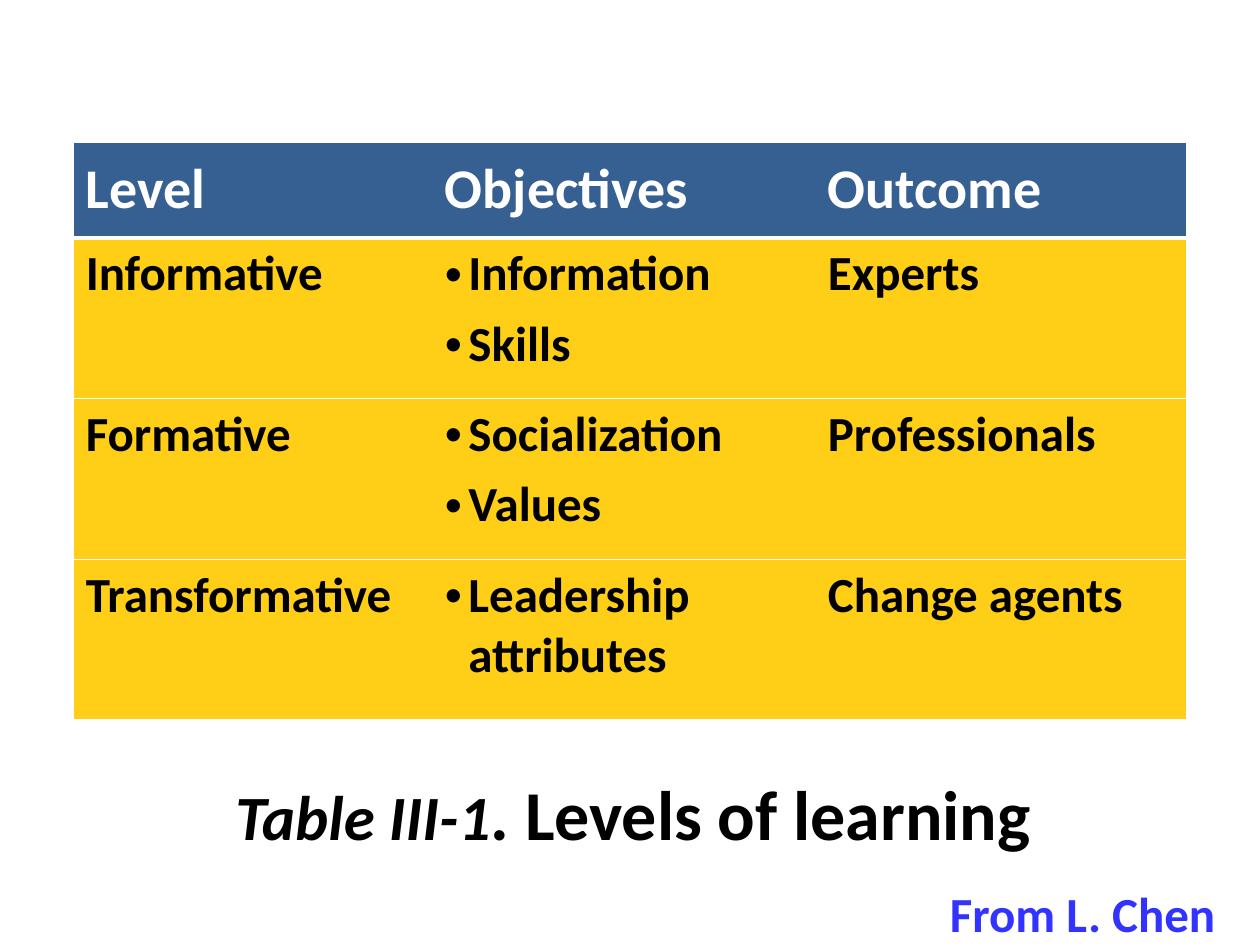
from dataclasses import dataclass

import pptx
import pptx.dml.color
import pptx.enum.text
import pptx.oxml
import pptx.oxml.ns
import pptx.util
from pptx.util import Pt


@dataclass(frozen=True)
class Theme:
    font: str = "Calibri"
    white: str = "FFFFFF"
    black: str = "000000"
    header_fill: str = "376092"
    body_fill: str = "FFCE17"
    credit: str = "3333FF"
    header_size: int = 32
    body_size: int = 28
    label_size: int = 36
    title_size: int = 40
    credit_size: int = 28
    rule: int = 1
    header_rule: int = 3
    bullet_indent: float = 13.5


COLUMN_WIDTHS = [205.2, 218.9, 212.4]
HEADER_HEIGHT, LEVEL_HEIGHT = 55, 91.8
HEADINGS = ["Level", "Objectives", "Outcome"]
LEVELS = [
    ("Informative", ["Information", "Skills"], "Experts"),
    ("Formative", ["Socialization", "Values"], "Professionals"),
    ("Transformative", ["Leadership attributes"], "Change agents"),
]


def rgb(color):
    return pptx.dml.color.RGBColor.from_string(color)


def element(xml):
    """Parse a DrawingML element, adding the namespace to its root tag."""
    tag, rest = xml.split(" ", 1)
    return pptx.oxml.parse_xml(f"{tag} {pptx.oxml.ns.nsdecls('a')} {rest}")


class SlideBuilder:
    def __init__(self, slide, theme):
        self.slide = slide
        self.theme = theme

    def style(self, run, size, color, italic=False):
        font = run.font
        font.name = self.theme.font
        font.size = Pt(size)
        font.bold = True
        font.italic = italic
        font.color.rgb = rgb(color)

    def text(self, left, top, width, height, runs, align, anchor):
        """Add one line of text from (text, size, color, italic) runs."""
        box = self.slide.shapes.add_textbox(Pt(left), Pt(top), Pt(width), Pt(height))
        frame = box.text_frame
        frame.word_wrap = True
        frame.vertical_anchor = anchor
        line = frame.paragraphs[0]
        line.alignment = align
        for wording, size, color, italic in runs:
            run = line.add_run()
            run.text = wording
            self.style(run, size, color, italic)

    def bullet(self, paragraph):
        properties = paragraph._p.get_or_add_pPr()
        indent = Pt(self.theme.bullet_indent)
        properties.set("marL", str(indent))
        properties.set("indent", str(-indent))
        properties.append(element('<a:buFont typeface="Arial"/>'))
        properties.append(element('<a:buChar char="•"/>'))

    def borders(self, cell, widths):
        """Set the left, right, top and bottom borders; None hides one."""
        properties = cell._tc.get_or_add_tcPr()
        for place, (side, width) in enumerate(zip("LRTB", widths)):
            if width is None:
                xml = f'<a:ln{side} w="0"><a:noFill/></a:ln{side}>'
            else:
                xml = (f'<a:ln{side} w="{Pt(width)}"><a:solidFill>'
                       f'<a:srgbClr val="{self.theme.white}"/>'
                       f'</a:solidFill></a:ln{side}>')
            properties.insert(place, element(xml))

    def cell(self, cell, lines, is_header, bulleted):
        theme = self.theme
        cell.fill.solid()
        cell.fill.fore_color.rgb = rgb(theme.header_fill if is_header else theme.body_fill)
        anchors = pptx.enum.text.MSO_ANCHOR
        cell.vertical_anchor = anchors.MIDDLE if is_header else anchors.TOP
        cell.text_frame.text = "\n".join(lines)
        for paragraph in cell.text_frame.paragraphs:
            if is_header:
                self.style(paragraph.runs[0], theme.header_size, theme.white)
            else:
                self.style(paragraph.runs[0], theme.body_size, theme.black)
                paragraph.space_before = Pt(6)
            if bulleted:
                self.bullet(paragraph)

    def table(self, left, top, widths, heights, rows):
        theme = self.theme
        table = self.slide.shapes.add_table(
            len(rows), len(widths), Pt(left), Pt(top),
            Pt(sum(widths)), Pt(sum(heights))).table
        for column, width in zip(table.columns, widths):
            column.width = Pt(width)
        for row, height in zip(table.rows, heights):
            row.height = Pt(height)
        last_column = len(widths) - 1
        for r, row in enumerate(rows):
            for c, content in enumerate(row):
                bulleted = isinstance(content, list)
                lines = content if bulleted else [content]
                cell = table.cell(r, c)
                self.cell(cell, lines, r == 0, bulleted)
                self.borders(cell, [
                    theme.rule if c == 0 else None,
                    theme.rule if c == last_column else None,
                    theme.header_rule if r == 1 else theme.rule,
                    theme.header_rule if r == 0 else theme.rule])


def main():
    presentation = pptx.Presentation()
    presentation.slide_width, presentation.slide_height = Pt(720), Pt(540)
    theme = Theme()
    slide = presentation.slides.add_slide(presentation.slide_layouts[6])
    builder = SlideBuilder(slide, theme)
    align, anchor = pptx.enum.text.PP_ALIGN, pptx.enum.text.MSO_ANCHOR

    builder.table(41.8, 81, COLUMN_WIDTHS,
                  [HEADER_HEIGHT] + [LEVEL_HEIGHT] * len(LEVELS),
                  [HEADINGS, *LEVELS])
    builder.text(75.6, 429.8, 572.4, 69.1, [
        ("Table III-1", theme.label_size, theme.black, True),
        (". Levels of learning", theme.title_size, theme.black, False),
    ], align.CENTER, anchor.MIDDLE)
    builder.text(535.7, 501.1, 187.2, 41, [
        ("From L. Chen", theme.credit_size, theme.credit, False),
    ], align.LEFT, anchor.TOP)
    presentation.save("out.pptx")


if __name__ == "__main__":
    main()
